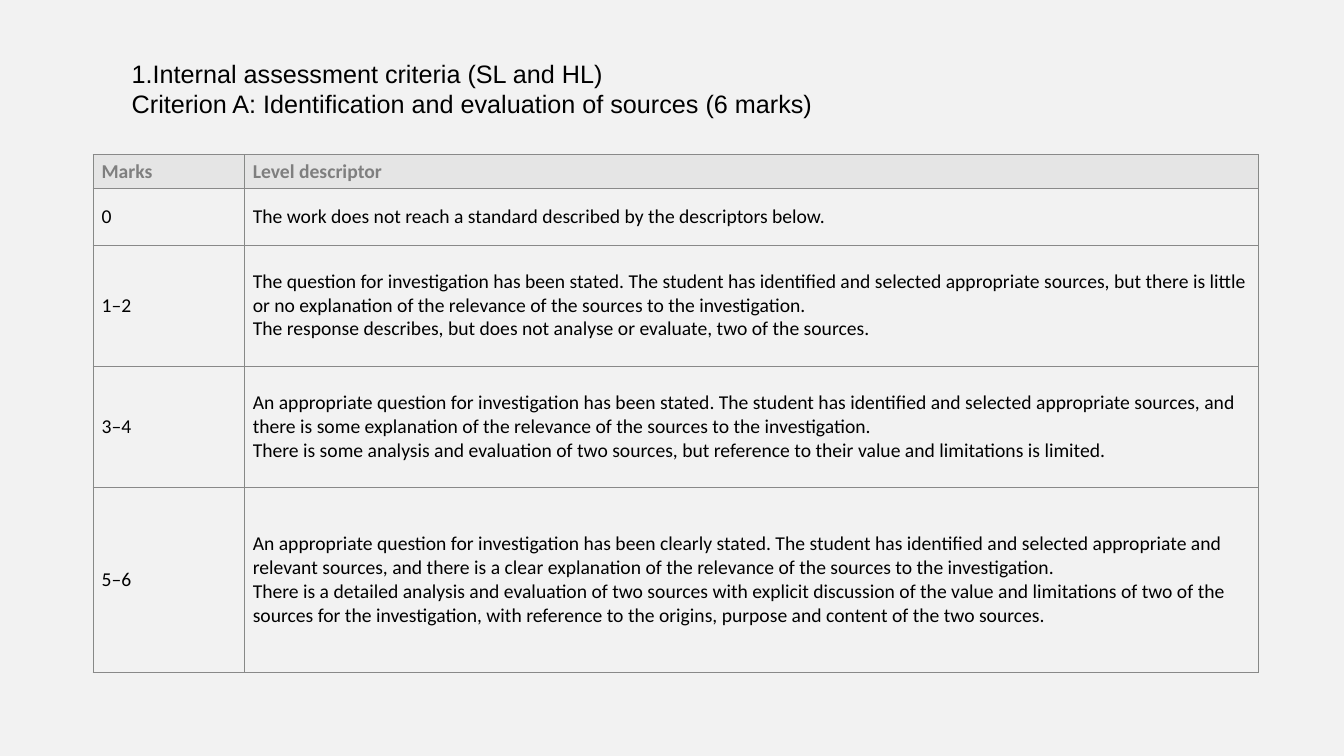
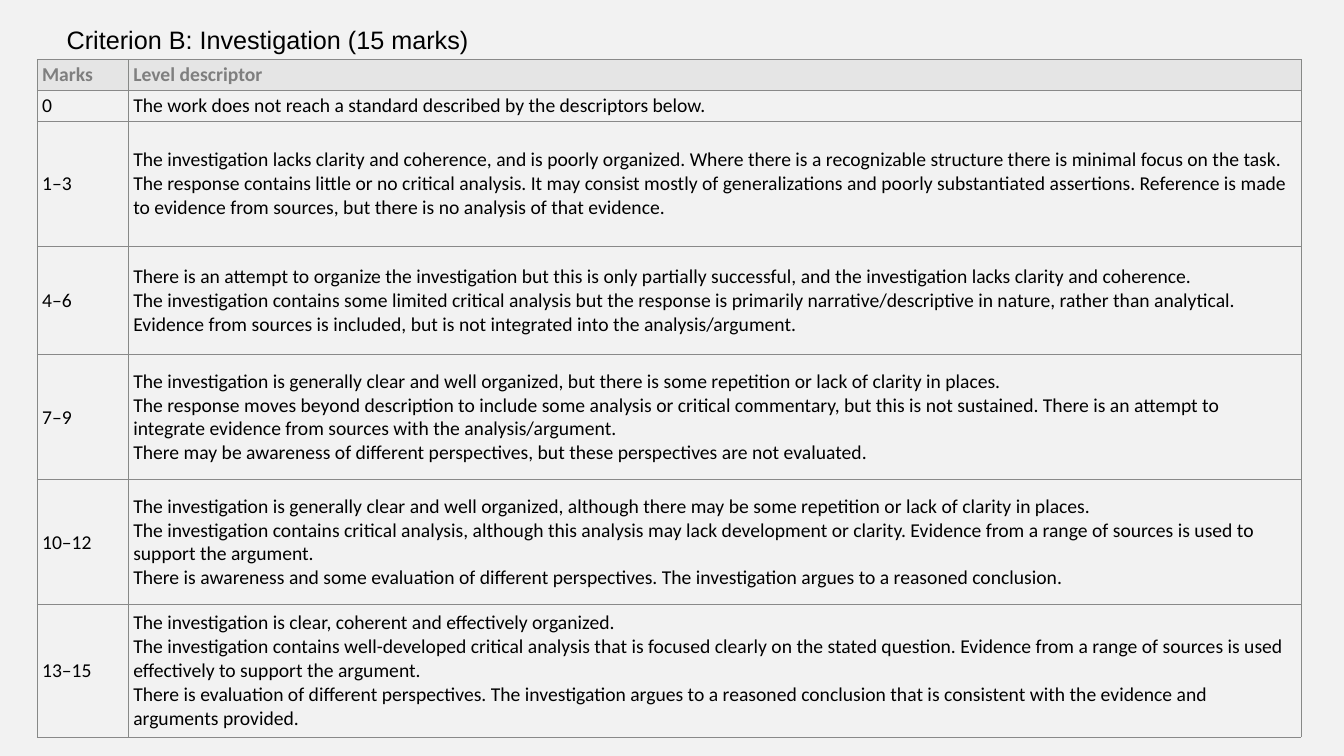
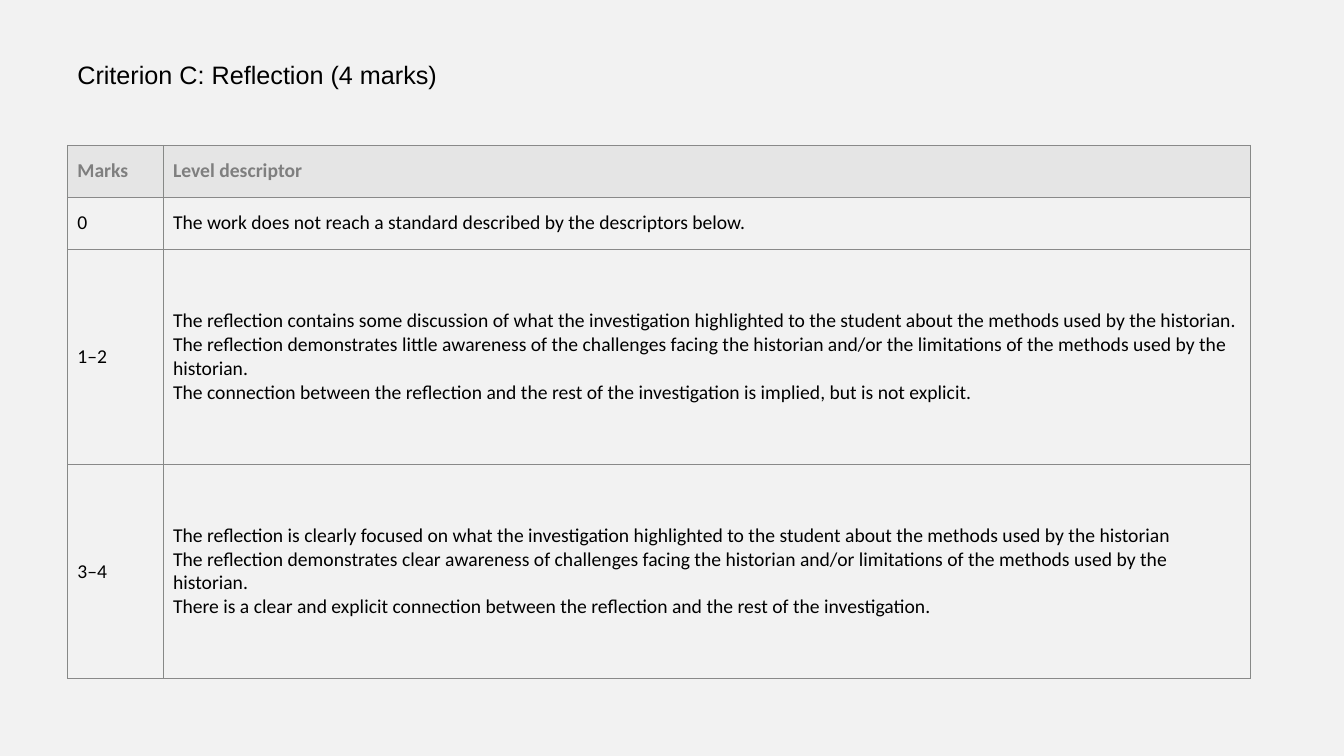
from pptx import Presentation
from pptx.dml.color import RGBColor as Rgb
from pptx.enum.text import MSO_ANCHOR as Anchor
from pptx.oxml import parse_xml
from pptx.oxml.ns import nsdecls
from pptx.util import Cm, Pt

COLORS = {
    "back": "F2F2F2",
    "head": "E5E5E5",
    "label": "7F7F7F",
    "text": "000000",
    "side": "878987",
    "rule": "898989",
}
BORDERS = {"lnL": "side", "lnR": "side", "lnT": "rule", "lnB": "rule"}
ZERO = "The work does not reach a standard described by the descriptors below."


def color(name):
    return Rgb.from_string(COLORS[name])


def write(frame, text, font="Calibri", size=14, tint="text", bold=False, number=False):
    frame.word_wrap = True
    for i, line in enumerate(text.split("\n")):
        para = frame.paragraphs[0] if i == 0 else frame.add_paragraph()
        if number and i == 0:
            para._p.get_or_add_pPr().append(
                parse_xml(f'<a:buAutoNum {nsdecls("a")} type="arabicPeriod"/>'))
        run = para.add_run()
        run.text = line
        run.font.name = font
        run.font.size = Pt(size)
        run.font.bold = bold
        run.font.color.rgb = color(tint)


class Deck:
    def __init__(self):
        self.prs = Presentation()
        self.prs.slide_width, self.prs.slide_height = Cm(33.87), Cm(19.05)
        fill = self.prs.slide_master.background.fill
        fill.solid()
        fill.fore_color.rgb = color("back")

    def page(self):
        self.slide = self.prs.slides.add_slide(self.prs.slide_layouts[6])

    def title(self, text, box, number=False):
        frame = self.slide.shapes.add_textbox(*map(Cm, box)).text_frame
        frame.vertical_anchor = Anchor.MIDDLE
        write(frame, text, font="Arial", size=18, number=number)

    def table(self, left, top, cols, head, levels, pad):
        rows = [(head, "Marks", "Level descriptor")] + levels
        high = sum(row[0] for row in rows)
        sizes = map(Cm, (left, top, sum(cols), high))
        grid = self.slide.shapes.add_table(len(rows), len(cols), *sizes).table
        grid.horz_banding = False
        for col, width in zip(grid.columns, cols):
            col.width = Cm(width)
        for r, (height, *texts) in enumerate(rows):
            grid.rows[r].height = Cm(height)
            for c, text in enumerate(texts):
                self.cell(grid.cell(r, c), text, r == 0, pad)

    def cell(self, cell, text, head, pad):
        cell.margin_left = cell.margin_right = Cm(pad[0])
        cell.margin_top = cell.margin_bottom = Cm(pad[1])
        cell.vertical_anchor = Anchor.MIDDLE
        write(cell.text_frame, text, tint="label" if head else "text", bold=head)
        props = cell._tc.get_or_add_tcPr()
        for tag, name in BORDERS.items():
            props.append(parse_xml(
                f'<a:{tag} {nsdecls("a")} w="{Pt(0.5)}"><a:solidFill>'
                f'<a:srgbClr val="{COLORS[name]}"/></a:solidFill></a:{tag}>'))
        if head:
            cell.fill.solid()
            cell.fill.fore_color.rgb = color("head")
        else:
            cell.fill.background()


def main():
    deck = Deck()

    deck.page()
    deck.table(2.34, 3.89, (3.81, 25.55), 0.86, [
        (1.42, "0", ZERO),
        (3.05, "1–2",
         "The question for investigation has been stated. The student has identified and selected "
         "appropriate sources, but there is little or no explanation of the relevance of the "
         "sources to the investigation.\n"
         "The response describes, but does not analyse or evaluate, two of the sources."),
        (3.05, "3–4",
         "An appropriate question for investigation has been stated. The student has identified "
         "and selected appropriate sources, and there is some explanation of the relevance of the "
         "sources to the investigation.\n"
         "There is some analysis and evaluation of two sources, but reference to their value and "
         "limitations is limited."),
        (4.68, "5–6",
         "An appropriate question for investigation has been clearly stated. The student has "
         "identified and selected appropriate and relevant sources, and there is a clear "
         "explanation of the relevance of the sources to the investigation.\n"
         "There is a detailed analysis and evaluation of two sources with explicit discussion of "
         "the value and limitations of two of the sources for the investigation, with reference "
         "to the origins, purpose and content of the two sources."),
    ], (0.22, 0.11))
    deck.title("Internal assessment criteria (SL and HL)\n"
               "Criterion A: Identification and evaluation of sources (6 marks)",
               (3.07, 0.56, 22.23, 3.33), number=True)

    deck.page()
    deck.table(0.94, 1.5, (2.3, 29.55), 0.78, [
        (0.78, "0", ZERO),
        (3.15, "1–3",
         "The investigation lacks clarity and coherence, and is poorly organized. Where there is "
         "a recognizable structure there is minimal focus on the task.\n"
         "The response contains little or no critical analysis. It may consist mostly of "
         "generalizations and poorly substantiated assertions. Reference is made to evidence "
         "from sources, but there is no analysis of that evidence."),
        (2.73, "4–6",
         "There is an attempt to organize the investigation but this is only partially "
         "successful, and the investigation lacks clarity and coherence.\n"
         "The investigation contains some limited critical analysis but the response is primarily "
         "narrative/descriptive in nature, rather than analytical. Evidence from sources is "
         "included, but is not integrated into the analysis/argument."),
        (3.15, "7–9",
         "The investigation is generally clear and well organized, but there is some repetition "
         "or lack of clarity in places.\n"
         "The response moves beyond description to include some analysis or critical commentary, "
         "but this is not sustained. There is an attempt to integrate evidence from sources with "
         "the analysis/argument.\n"
         "There may be awareness of different perspectives, but these perspectives are not "
         "evaluated."),
        (3.15, "10–12",
         "The investigation is generally clear and well organized, although there may be some "
         "repetition or lack of clarity in places.\n"
         "The investigation contains critical analysis, although this analysis may lack "
         "development or clarity. Evidence from a range of sources is used to support the "
         "argument.\n"
         "There is awareness and some evaluation of different perspectives. The investigation "
         "argues to a reasoned conclusion."),
        (3.33, "13–15",
         "The investigation is clear, coherent and effectively organized.\n"
         "The investigation contains well-developed critical analysis that is focused clearly on "
         "the stated question. Evidence from a range of sources is used effectively to support "
         "the argument.\n"
         "There is evaluation of different perspectives. The investigation argues to a reasoned "
         "conclusion that is consistent with the evidence and arguments provided."),
    ], (0.12, 0.07))
    deck.title("Criterion B: Investigation (15 marks)", (1.43, 0.49, 31.4, 1.03))

    deck.page()
    deck.table(1.7, 3.66, (2.41, 27.4), 1.31, [
        (1.31, "0", ZERO),
        (5.41, "1–2",
         "The reflection contains some discussion of what the investigation highlighted to the "
         "student about the methods used by the historian.\n"
         "The reflection demonstrates little awareness of the challenges facing the historian "
         "and/or the limitations of the methods used by the historian.\n"
         "The connection between the reflection and the rest of the investigation is implied, "
         "but is not explicit."),
        (5.41, "3–4",
         "The reflection is clearly focused on what the investigation highlighted to the student "
         "about the methods used by the historian\n"
         "The reflection demonstrates clear awareness of challenges facing the historian and/or "
         "limitations of the methods used by the historian.\n"
         "There is a clear and explicit connection between the reflection and the rest of the "
         "investigation."),
    ], (0.25, 0.13))
    deck.title("Criterion C: Reflection (4 marks)", (1.7, 1.25, 29.8, 1.27))

    deck.prs.save("out.pptx")


if __name__ == "__main__":
    main()
